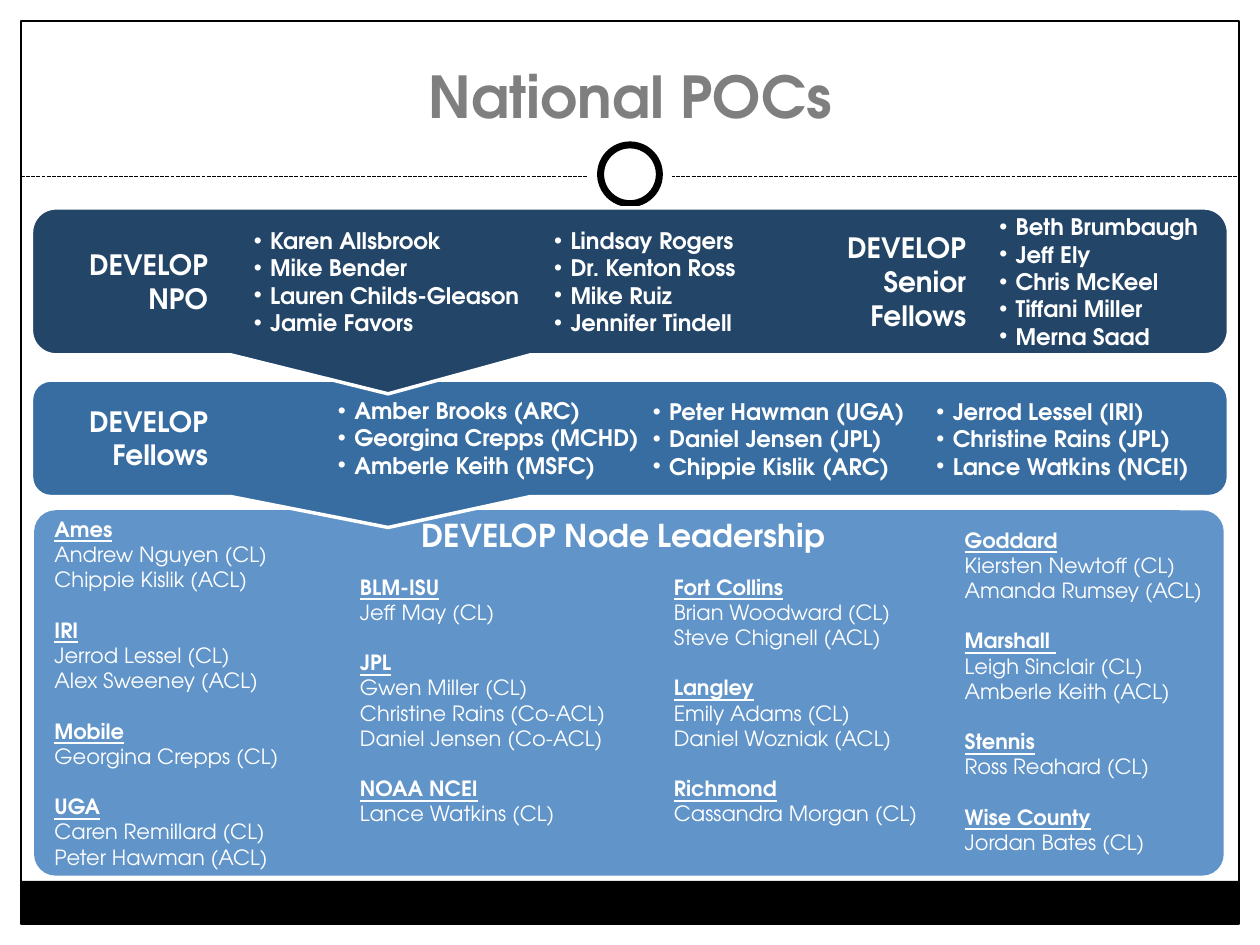
from lxml import etree
from pptx import Presentation
from pptx.dml.color import RGBColor
from pptx.enum.dml import MSO_LINE
from pptx.enum.shapes import MSO_CONNECTOR, MSO_SHAPE
from pptx.enum.text import MSO_ANCHOR, PP_ALIGN
from pptx.oxml.ns import qn
from pptx.util import Inches, Pt

DASH = MSO_LINE.SQUARE_DOT
RECT, OVAL = MSO_SHAPE.RECTANGLE, MSO_SHAPE.OVAL
ROUND, CALL = MSO_SHAPE.ROUNDED_RECTANGLE, MSO_SHAPE.ROUNDED_RECTANGULAR_CALLOUT
LEFT, MID, RIGHT = PP_ALIGN.LEFT, PP_ALIGN.CENTER, PP_ALIGN.RIGHT

HUES = {"black": "000000", "white": "FFFFFF", "gray": "7F7F7F",
        "navy": "234567", "blue": "386DA2", "sky": "6194C8"}
INK = {key: RGBColor.from_string(val) for key, val in HUES.items()}
FACE = "TeX Gyre Adventor"
COLS, ROWS = 120, 90  # grid cells across and down the slide

deck = Presentation()
deck.slide_width, deck.slide_height = Inches(10), Inches(7.5)
CELL_W, CELL_H = deck.slide_width / COLS, deck.slide_height / ROWS
slide = deck.slides.add_slide(deck.slide_layouts[5])
shapes = slide.shapes


def block(kind, box, fill=None, line=None, width=0.75, adj=()):
    """Draw a preset shape on a grid box of (column, row, columns, rows)."""
    col, row, wide, high = box
    shape = shapes.add_shape(kind, int(col * CELL_W), int(row * CELL_H),
                             int(wide * CELL_W), int(high * CELL_H))
    shape.shadow.inherit = False
    for part, hue in ((shape.fill, fill), (shape.line.fill, line)):
        if hue:
            part.solid()
            part.fore_color.rgb = INK[hue]
        else:
            part.background()
    if line:
        shape.line.width = Pt(width)
    for i, value in enumerate(adj):
        shape.adjustments[i] = value


def write(box, lines, size, align=LEFT, bold=True, bullet=False, heads=(), hue="white", frame=None):
    """Write lines into a text frame; lines listed in heads are bold, underlined and spaced."""
    if frame is None:
        col, row, wide, high = box
        frame = shapes.add_textbox(int(col * CELL_W), int(row * CELL_H),
                                   int(wide * CELL_W), int(high * CELL_H)).text_frame
    frame.word_wrap = True
    for i, line in enumerate(lines):
        para = frame.add_paragraph() if i else frame.paragraphs[0]
        para.alignment = align
        head = line in heads
        if head and i:
            para.space_before = Pt(size * 1.2)
        run = para.add_run()
        run.text = line
        style = {"name": FACE, "size": Pt(size), "bold": bold or head, "underline": head}
        for key, value in style.items():
            setattr(run.font, key, value)
        run.font.color.rgb = INK[hue]
        if bullet:
            props = para._p.get_or_add_pPr()
            props.set("marL", str(Inches(0.13)))
            props.set("indent", str(-Inches(0.13)))
            etree.SubElement(props, qn("a:buFont")).set("typeface", "Arial")
            etree.SubElement(props, qn("a:buChar")).set("char", "•")


# Frame, dashed rule and ring
block(RECT, (2, 83.9, 116, 4.1), "black")
block(RECT, (2, 2, 116, 86), line="black")
rule = shapes.add_connector(MSO_CONNECTOR.STRAIGHT, int(2 * CELL_W), int(16.8 * CELL_H),
                            int(118 * CELL_W), int(16.8 * CELL_H))
rule.line.color.rgb, rule.line.width, rule.line.dash_style = INK["black"], Pt(0.75), DASH
etree.SubElement(rule._element.spPr, qn("a:effectLst"))
block(OVAL, (56, 12.6, 8, 8), "white")
block(OVAL, (57.2, 13.8, 5.6, 5.6), "white", "black", 4)

# Title
title = shapes.title
title.left, title.top = int(4 * CELL_W), int(3 * CELL_H)
title.width, title.height = int(112 * CELL_W), int(10 * CELL_H)
title.text_frame.vertical_anchor = MSO_ANCHOR.BOTTOM
write(None, ["National POCs"], 33, MID, hue="gray", frame=title.text_frame)

# Node leadership panel
block(ROUND, (3.25, 48.6, 113.3, 34.8), "sky", adj=[0.059])
nodes = [
    ((4, 48.6, 27.5, 35), {
        "Ames": ["Andrew Nguyen (CL)", "Chippie Kislik (ACL)"],
        "IRI": ["Jerrod Lessel (CL)", "Alex Sweeney (ACL)"],
        "Mobile": ["Georgina Crepps (CL)"],
        "UGA": ["Caren Remillard (CL)", "Peter Hawman (ACL)"]}),
    ((33.1, 54.1, 29.9, 25.4), {
        "BLM-ISU": ["Jeff May (CL)"],
        "JPL": ["Gwen Miller (CL)", "Christine Rains (Co-ACL)", "Daniel Jensen (Co-ACL)"],
        "NOAA NCEI": ["Lance Watkins (CL)"]}),
    ((63, 54.1, 26, 25.4), {
        "Fort Collins": ["Brian Woodward (CL)", "Steve Chignell (ACL)"],
        "Langley": ["Emily Adams (CL)", "Daniel Wozniak (ACL)"],
        "Richmond": ["Cassandra Morgan (CL)"]}),
    ((90.7, 49.6, 25.2, 32.8), {
        "Goddard": ["Kiersten Newtoff (CL)", "Amanda Rumsey (ACL)"],
        "Marshall ": ["Leigh Sinclair (CL)", "Amberle Keith (ACL)"],
        "Stennis": ["Ross Reahard (CL)"],
        "Wise County": ["Jordan Bates (CL)"]}),
]
for box, group in nodes:
    lines = [text for head, names in group.items() for text in [head, *names]]
    write(box, lines, 12, bold=False, heads=group)
write((39, 48.6, 41.8, 4.8), ["DEVELOP Node Leadership"], 18)

# Callout bands, lower one first so that the upper pointer overlaps it
bands = [
    ((3, 36.2, 114, 11.1), "blue",
     [((4.7, 37.9, 16.3, 7.7), ["DEVELOP", "Fellows"])],
     [((31, 37.2, 33, 11.8), ["Amber Brooks (ARC)", "Georgina Crepps (MCHD)", "Amberle Keith (MSFC)"]),
      ((61, 37.3, 30, 11.8), ["Peter Hawman (UGA)", "Daniel Jensen (JPL)", "Chippie Kislik (ARC)"]),
      ((88, 37.3, 28, 11.8), ["Jerrod Lessel (IRI)", "Christine Rains (JPL)", "Lance Watkins (NCEI)"])]),
    ((3, 19.8, 114, 14), "navy",
     [((4.7, 23, 16.3, 7.7), ["DEVELOP", "NPO"]),
      ((76.9, 21.4, 16.3, 10.9), ["DEVELOP", "Senior Fellows"])],
     [((23, 21, 30, 11.8), ["Karen Allsbrook", "Mike Bender", "Lauren Childs-Gleason", "Jamie Favors"]),
      ((51.6, 21, 20.4, 11.8), ["Lindsay Rogers", "Dr. Kenton Ross", "Mike Ruiz", "Jennifer Tindell"]),
      ((94, 19.7, 24, 14.3), ["Beth Brumbaugh", "Jeff Ely", "Chris McKeel", "Tiffani Miller", "Merna Saad"])]),
]
for box, hue, labels, lists in bands:
    block(CALL, box, hue, "white", 2, [-0.202, 0.765, 0.167])
    for spot, lines in labels:
        write(spot, lines, 16, RIGHT)
    for spot, lines in lists:
        write(spot, lines, 13, bullet=True)

deck.save("out.pptx")
